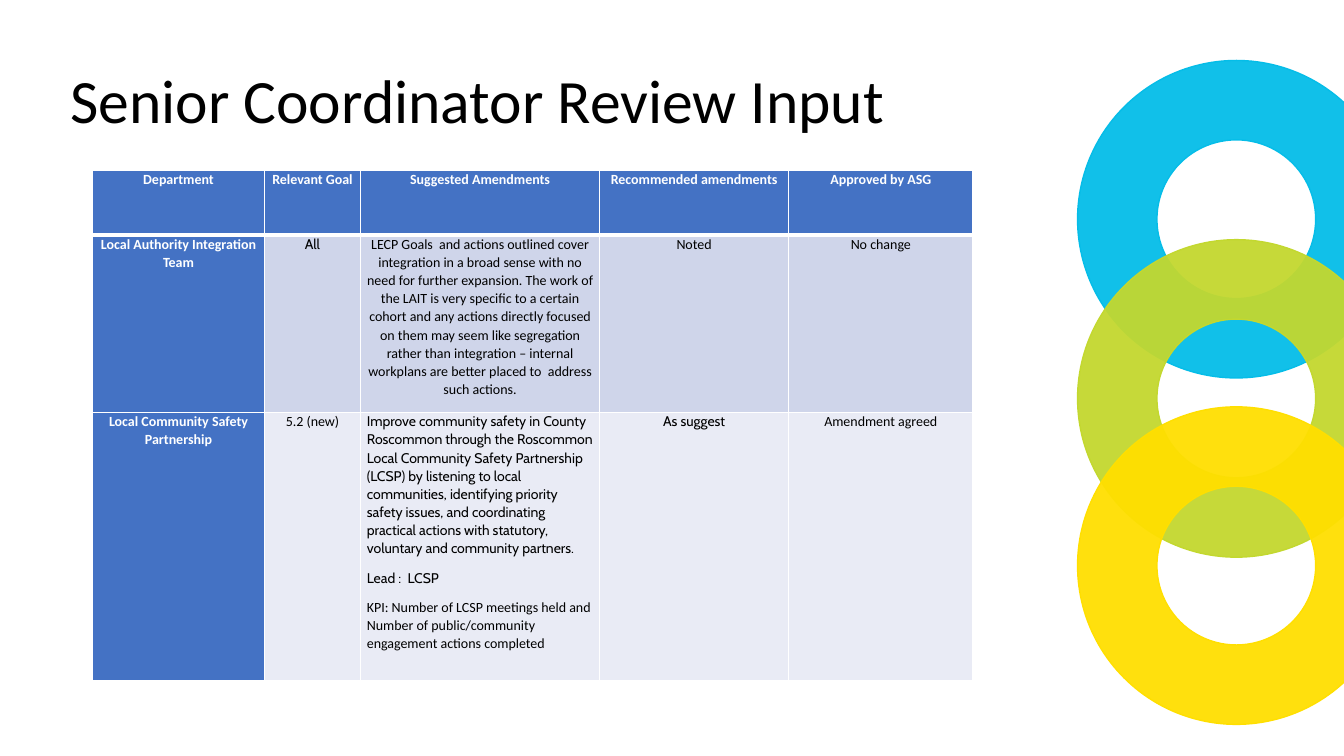
import pptx
import pptx.util
import pptx.dml.color
import pptx.enum.shapes
import pptx.enum.text
import pptx.oxml
import pptx.oxml.ns
from lxml import etree

Pt = pptx.util.Pt
RGB = pptx.dml.color.RGBColor.from_string
ALIGN = pptx.enum.text.PP_ALIGN
qn = pptx.oxml.ns.qn

THEME = {
    "black": "000000", "white": "FFFFFF", "header": "4472C4",
    "bands": ["CFD5EA", "E9EBF5"],
    "rings": ["05BDE8", "C3D82F", "FFDF00"],
    "main": "Calibri", "accent": "Cabin",
    "title_size": 44, "table_size": 10,
}


def style_font(font, name, size, color, bold=False):
    font.name = name
    font.size = Pt(size)
    font.bold = bold
    font.color.rgb = RGB(color)


def add_border(cell, side, width):
    line = etree.SubElement(cell._tc.get_or_add_tcPr(), qn(f"a:ln{side}"), w=str(Pt(width)))
    fill = etree.SubElement(line, qn("a:solidFill"))
    etree.SubElement(fill, qn("a:srgbClr"), val=THEME["white"])


deck = pptx.Presentation()
deck.slide_width = Pt(960)
deck.slide_height = Pt(540)
page = deck.slides.add_slide(deck.slide_layouts[5])

title = page.shapes.title
title.left, title.top, title.width, title.height = Pt(43.2), Pt(43.2), Pt(676.8), Pt(61.2)
title.text_frame.text = "Senior Coordinator Review Input"
title.text_frame.auto_size = pptx.enum.text.MSO_AUTO_SIZE.NONE
title.text_frame.vertical_anchor = pptx.enum.text.MSO_ANCHOR.MIDDLE
heading = title.text_frame.paragraphs[0]
heading.alignment = ALIGN.LEFT
heading.line_spacing = 0.9
style_font(heading.runs[0].font, THEME["main"], THEME["title_size"], THEME["black"])

for top, color in zip([43.2, 171.2, 290.6], THEME["rings"]):
    ring = page.shapes.add_shape(
        pptx.enum.shapes.MSO_SHAPE.DONUT, Pt(769.7), Pt(top), Pt(226.8), Pt(226.8))
    ring.shadow.inherit = False
    ring.fill.solid()
    ring.fill.fore_color.rgb = RGB(color)
    ring_color = ring._element.spPr.find(qn("a:solidFill")).find(qn("a:srgbClr"))
    etree.SubElement(ring_color, qn("a:alpha"), val="95000")
    ring.line.color.rgb = RGB(color)
    ring.line.width = Pt(1)

rows = [
    ["Department", "Relevant Goal", "Suggested Amendments",
     "Recommended amendments", "Approved by ASG"],
    ["Local Authority Integration Team", "All",
     "LECP Goals  and actions outlined cover integration in a broad sense with no need for "
     "further expansion. The work of the LAIT is very specific to a certain cohort and any "
     "actions directly focused on them may seem like segregation rather than integration – "
     "internal workplans are better placed to  address such actions.",
     "Noted", "No change"],
    ["Local Community Safety Partnership", "5.2 (new)",
     "Improve community safety in County Roscommon through the Roscommon Local Community "
     "Safety Partnership (LCSP) by listening to local communities, identifying priority "
     "safety issues, and coordinating practical actions with statutory, voluntary and "
     "community partners.\n"
     "Lead :  LCSP\n"
     "KPI: Number of LCSP meetings held and Number of public/community engagement actions "
     "completed",
     "As suggest", "Amendment agreed"],
]
accent_paragraphs = {(1, 1, 0), (2, 2, 0), (2, 2, 1), (2, 3, 0)}
column_widths = [122.6, 68.8, 170.6, 135.2, 131.6]
row_heights = [46.2, 126.6, 192]

frame = page.shapes.add_table(
    len(rows), len(column_widths), Pt(66.2), Pt(121.7),
    Pt(sum(column_widths)), Pt(sum(row_heights)))
table = frame.table
for column, width in zip(table.columns, column_widths):
    column.width = Pt(width)
for row, height in zip(table.rows, row_heights):
    row.height = Pt(height)

for r, texts in enumerate(rows):
    for c, text in enumerate(texts):
        cell = table.cell(r, c)
        is_header = r == 0 or c == 0
        cell.text_frame.text = text
        cell.margin_left = cell.margin_right = Pt(4.5)
        cell.margin_top = cell.margin_bottom = 0
        for side, width in [("L", 1), ("R", 1), ("T", 3 if r == 1 else 1), ("B", 3 if r == 0 else 1)]:
            add_border(cell, side, width)
        cell.fill.solid()
        cell.fill.fore_color.rgb = RGB(THEME["header"] if is_header else THEME["bands"][r - 1])
        for p, para in enumerate(cell.text_frame.paragraphs):
            para.alignment = ALIGN.LEFT if (r, c) == (2, 2) else ALIGN.CENTER
            para.line_spacing = 1.07
            para.space_after = Pt(8)
            style_font(
                para.runs[0].font,
                THEME["accent" if (r, c, p) in accent_paragraphs else "main"],
                THEME["table_size"],
                THEME["white" if is_header else "black"],
                is_header)

deck.save("out.pptx")
